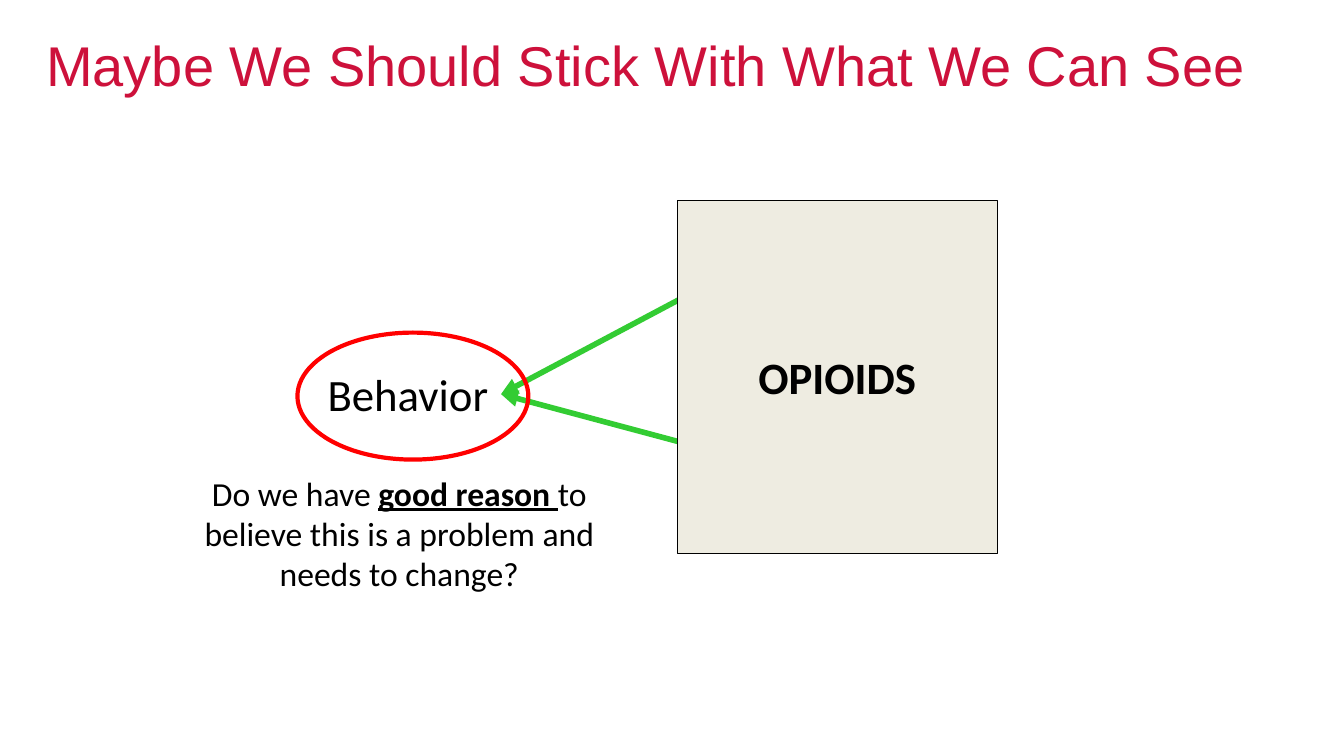
from dataclasses import dataclass

from lxml import etree
from pptx import Presentation
from pptx.dml.color import RGBColor
from pptx.enum.shapes import MSO_CONNECTOR, MSO_SHAPE
from pptx.enum.text import MSO_ANCHOR, PP_ALIGN
from pptx.oxml.ns import qn
from pptx.util import Inches, Pt

STRAIGHT = MSO_CONNECTOR.STRAIGHT
RECTANGLE, OVAL = MSO_SHAPE.RECTANGLE, MSO_SHAPE.OVAL
TOP, MIDDLE, BOTTOM = MSO_ANCHOR.TOP, MSO_ANCHOR.MIDDLE, MSO_ANCHOR.BOTTOM
LEFT, CENTER = PP_ALIGN.LEFT, PP_ALIGN.CENTER


@dataclass(frozen=True)
class Theme:
    heading_font: str = "Arial"
    body_font: str = "Calibri"
    title_size: int = 40
    label_size: int = 32
    question_size: int = 24
    title: str = "CD113B"
    text: str = "000000"
    panel: str = "EEECE1"
    arrow: str = "33CC33"
    ring: str = "FF0000"


THEME = Theme()


def color(value):
    return RGBColor.from_string(value)


def write(shape, runs, size, font=THEME.body_font, ink=THEME.text,
          align=LEFT, anchor=TOP, wrap=True):
    """Fill the shape with one paragraph of (text, extra font formats) runs."""
    frame = shape.text_frame
    frame.word_wrap = wrap
    frame.vertical_anchor = anchor
    paragraph = frame.paragraphs[0]
    paragraph.alignment = align
    for text, extra in runs:
        run = paragraph.add_run()
        run.text = text
        formats = {"name": font, "size": Pt(size), "bold": False, **extra}
        for name, value in formats.items():
            setattr(run.font, name, value)
        run.font.color.rgb = color(ink)


def add_text(slide, box, runs, size, **options):
    shape = slide.shapes.add_textbox(*map(Inches, box))
    write(shape, runs, size, **options)


def add_outlined(slide, kind, box, line, width, fill=None):
    shape = slide.shapes.add_shape(kind, *map(Inches, box))
    shape.shadow.inherit = False
    if fill:
        shape.fill.solid()
        shape.fill.fore_color.rgb = color(fill)
    else:
        shape.fill.background()
    shape.line.color.rgb = color(line)
    shape.line.width = Pt(width)
    return shape


def add_arrow(slide, start, end):
    arrow = slide.shapes.add_connector(STRAIGHT, *map(Inches, (*start, *end)))
    arrow.line.color.rgb = color(THEME.arrow)
    arrow.line.width = Pt(4)
    etree.SubElement(arrow.line._get_or_add_ln(), qn("a:tailEnd"), type="triangle")
    etree.SubElement(arrow._element.spPr, qn("a:effectLst"))


def add_title(slide, box):
    add_text(slide, box, [("Maybe We Should Stick With What We Can See", {})],
             THEME.title_size, font=THEME.heading_font, ink=THEME.title, anchor=BOTTOM)


def add_opioids_panel(slide, box, target):
    """Draw the panel over the arrows that run from it to the target point."""
    left, top = box[:2]
    for drop in (0.81, 2.48):
        add_arrow(slide, (left + 0.34, top + drop), target)
    panel = add_outlined(slide, RECTANGLE, box, THEME.text, 0.75, THEME.panel)
    write(panel, [("OPIOIDS", {"bold": True})], THEME.label_size,
          align=CENTER, anchor=MIDDLE, wrap=False)


def add_behavior(slide, box):
    left, top = box[:2]
    add_text(slide, (left + 0.2, top + 0.29, 1.81, 0.64), [("Behavior", {})],
             THEME.label_size, wrap=False)
    add_outlined(slide, OVAL, box, THEME.ring, 3)


def add_question(slide, box):
    runs = [
        ("Do we have ", {}),
        ("good reason ", {"bold": True, "underline": True}),
        ("to believe this is a problem and needs to change?", {}),
    ]
    add_text(slide, box, runs, THEME.question_size, align=CENTER)


def main():
    presentation = Presentation()
    presentation.slide_width = Inches(13.33)
    presentation.slide_height = Inches(7.5)
    slide = presentation.slides.add_slide(presentation.slide_layouts[6])
    add_title(slide, (0.36, 0.24, 12.94, 0.78))
    add_opioids_panel(slide, (6.72, 1.99, 3.17, 3.5), target=(4.97, 3.91))
    add_behavior(slide, (2.95, 3.3, 2.29, 1.26))
    add_question(slide, (1.7, 4.64, 4.52, 1.31))
    presentation.save("out.pptx")


if __name__ == "__main__":
    main()
